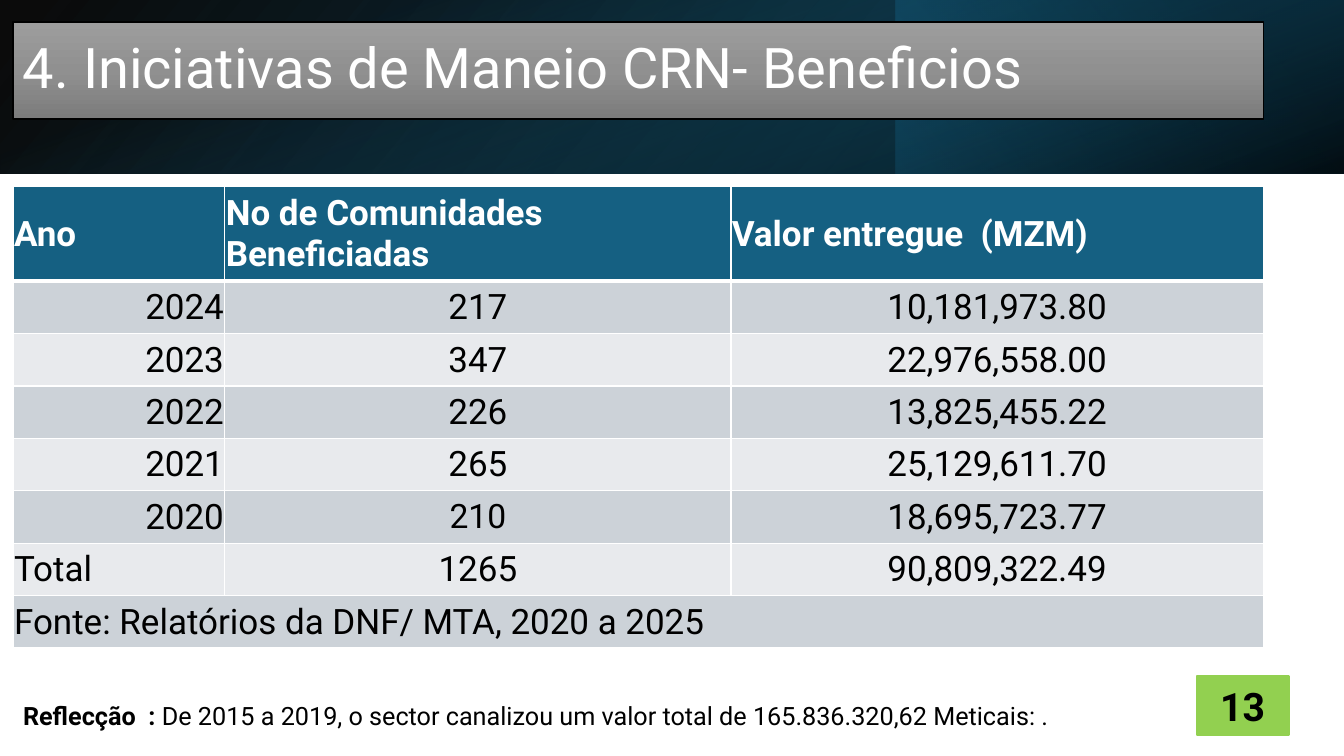
from lxml import etree
from pptx import Presentation
from pptx.dml.color import RGBColor
from pptx.enum.shapes import MSO_SHAPE as Shape
from pptx.enum.text import MSO_ANCHOR as Anchor, PP_ALIGN as Align
from pptx.oxml.ns import qn
from pptx.util import Inches, Pt

FONT = "Roboto"
COLORS = {
    "white": "FFFFFF", "black": "000000", "teal": "156082",
    "deep_teal": "104862", "dark_teal": "0B3041",
    "title_top": "9D9D9D", "title_middle": "909090", "title_bottom": "7C7C7C",
    "odd_row": "CCD2D8", "even_row": "E8EAED", "green": "92D050",
}
HEADINGS = ["Ano", "No de Comunidades Beneficiadas", "Valor entregue  (MZM)"]
BENEFITS = [
    ["2024", "217", "10,181,973.80"],
    ["2023", "347", "22,976,558.00"],
    ["2022", "226", "13,825,455.22"],
    ["2021", "265", "25,129,611.70"],
    ["2020", "210", "18,695,723.77"],
    ["Total", "1265", "90,809,322.49"],
    ["Fonte: Relatórios da DNF/ MTA, 2020 a 2025", "", ""],
]


def color(name):
    return RGBColor.from_string(COLORS[name])


def add_span(para, text, size, ink="black", bold=False):
    span = para.add_run()
    span.text = text
    span.font.name = FONT
    span.font.size = Pt(size)
    span.font.bold = bold
    span.font.color.rgb = color(ink)


def add_box(page, box, line=None, width=1):
    shape = page.shapes.add_shape(Shape.RECTANGLE, *map(Inches, box))
    shape.shadow.inherit = False
    if line:
        shape.line.color.rgb = color(line)
        shape.line.width = Pt(width)
    else:
        shape.line.fill.background()
    return shape


def fill_gradient(shape, stops, angle):
    shape.fill.gradient()
    gradient = shape.element.spPr.find(qn("a:gradFill"))
    stop_list = gradient.find(qn("a:gsLst"))
    for stop in list(stop_list):
        stop_list.remove(stop)
    for position, name, opacity in stops:
        stop = etree.SubElement(stop_list, qn("a:gs"), pos=str(position * 1000))
        tint = etree.SubElement(stop, qn("a:srgbClr"), val=COLORS[name])
        if opacity < 100:
            etree.SubElement(tint, qn("a:alpha"), val=str(opacity * 1000))
    gradient.find(qn("a:lin")).set("ang", str(angle * 60000))


def add_banner(page, box):
    left, top, width, height = box
    base = add_box(page, box)
    base.element.spPr.find(qn("a:xfrm")).set("flipH", "1")
    fill_gradient(base, [(0, "black", 96), (100, "deep_teal", 100)], 140)

    side = add_box(page, (left + width * 2 / 3, top, width / 3, height))
    side.rotation = 180
    fill_gradient(side, [(19, "dark_teal", 68), (100, "teal", 79)], 320)

    shift = (width - height) / 2
    shade = add_box(page, (left + shift, top - shift, height, width))
    shade.rotation = 90
    fill_gradient(shade, [(23, "teal", 0), (99, "black", 74)], 340)


def add_title(page, box):
    shape = add_box(page, box, "black")
    fill_gradient(shape, [(0, "title_top", 100), (50, "title_middle", 100),
                          (100, "title_bottom", 100)], 90)
    frame = shape.text_frame
    frame.word_wrap = True
    frame.vertical_anchor = Anchor.MIDDLE
    para = frame.paragraphs[0]
    para.alignment = Align.LEFT
    para.line_spacing = 0.9
    add_span(para, "4. Iniciativas de Maneio CRN- Beneficios", 40, "white")


def set_borders(cell, row):
    properties = cell._tc.get_or_add_tcPr()
    widths = {"L": 1, "R": 1, "T": 3 if row == 1 else 1, "B": 3 if row == 0 else 1}
    for side, width in widths.items():
        line = etree.SubElement(properties, qn(f"a:ln{side}"), w=str(Pt(width)))
        fill = etree.SubElement(line, qn("a:solidFill"))
        etree.SubElement(fill, qn("a:srgbClr"), val=COLORS["white"])


def cell_alignment(row, column, text):
    if row == 0 or (column == 0 and not text.isdigit()):
        return Align.LEFT
    return Align.RIGHT if column == 0 else Align.CENTER


def fill_cell(cell, row, column, text):
    set_borders(cell, row)
    header = row == 0
    cell.fill.solid()
    cell.fill.fore_color.rgb = color(
        "teal" if header else "odd_row" if row % 2 else "even_row")
    cell.margin_left = cell.margin_right = cell.margin_top = Inches(0.01)
    cell.margin_bottom = 0
    cell.vertical_anchor = Anchor.MIDDLE
    if text:
        para = cell.text_frame.paragraphs[0]
        para.alignment = cell_alignment(row, column, text)
        size = 24 if text == "210" else 25
        add_span(para, text, size, "white" if header else "black", header)


def add_benefits_table(page, box):
    rows = [HEADINGS] + BENEFITS
    table = page.shapes.add_table(len(rows), len(HEADINGS), *map(Inches, box)).table
    for column, width in zip(table.columns, (2.1, 5.02, 5.28)):
        column.width = Inches(width)
    for row, texts in enumerate(rows):
        table.rows[row].height = Inches(0.52 if row else 0.94)
        for column, text in enumerate(texts):
            fill_cell(table.cell(row, column), row, column, text)
    last = len(rows) - 1
    table.cell(last, 0).merge(table.cell(last, len(HEADINGS) - 1))


def add_reflection(page, box):
    frame = page.shapes.add_textbox(*map(Inches, box)).text_frame
    frame.word_wrap = True
    para = frame.paragraphs[0]
    para.line_spacing = 1.15
    para.space_after = Pt(8)
    add_span(para, "Reflecção  : ", 18, bold=True)
    add_span(para, "De 2015 a 2019, o sector canalizou um valor total de "
                   "165.836.320,62 Meticais: .", 18)


def add_page_number(page, box):
    shape = add_box(page, box, "green", 1.5)
    shape.fill.solid()
    shape.fill.fore_color.rgb = color("green")
    frame = shape.text_frame
    frame.vertical_anchor = Anchor.MIDDLE
    para = frame.paragraphs[0]
    para.alignment = Align.CENTER
    add_span(para, "13", 28, bold=True)


def main():
    deck = Presentation()
    deck.slide_width = Inches(13.33)
    deck.slide_height = Inches(7.5)
    page = deck.slides.add_slide(deck.slide_layouts[6])
    add_banner(page, (0, 0, 13.33, 1.72))
    add_title(page, (0.13, 0.22, 12.4, 0.96))
    add_benefits_table(page, (0.13, 1.85, 12.4, 4.58))
    add_reflection(page, (0.13, 6.85, 10.52, 0.43))
    add_page_number(page, (11.87, 6.71, 0.91, 0.58))
    deck.save("out.pptx")


if __name__ == "__main__":
    main()
